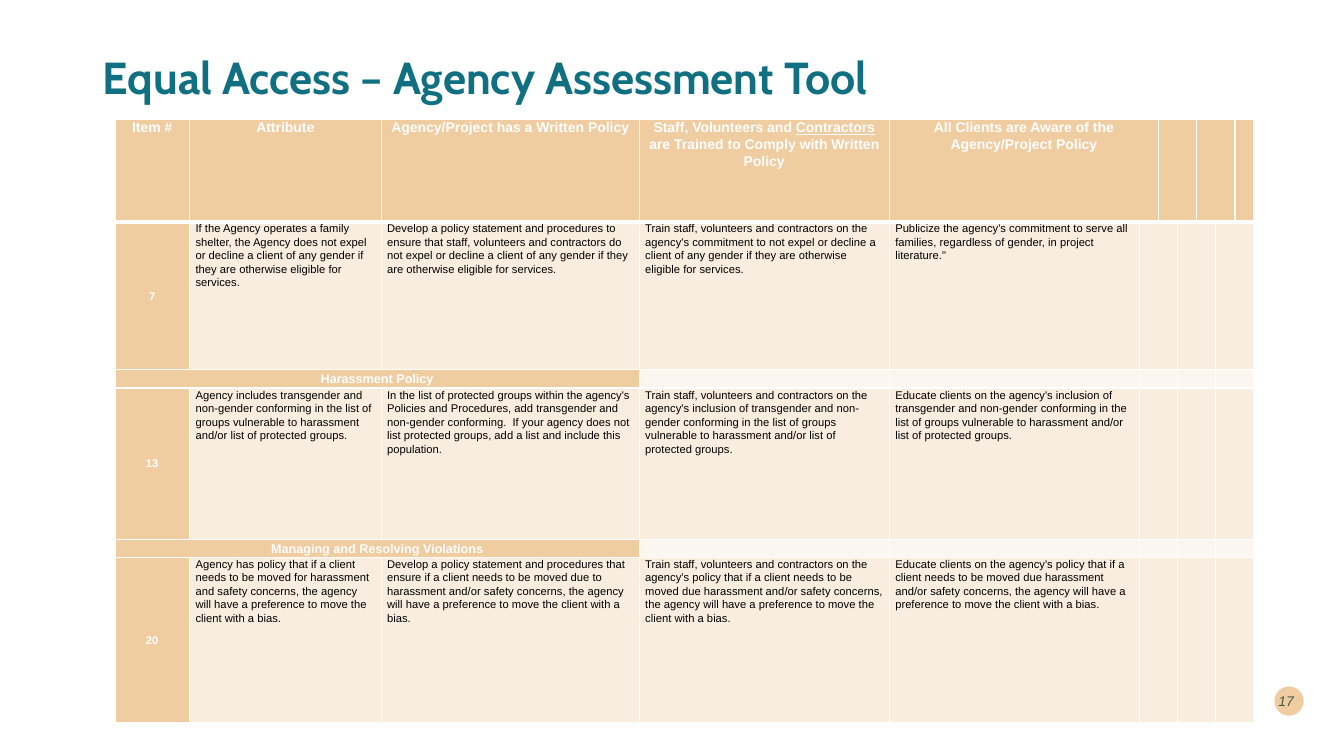
from lxml.etree import SubElement
from pptx import Presentation
from pptx.dml.color import RGBColor
from pptx.enum.shapes import MSO_SHAPE
from pptx.enum.text import MSO_ANCHOR, PP_ALIGN
from pptx.oxml import parse_xml
from pptx.oxml.ns import nsdecls, qn
from pptx.util import Inches, Pt

COLORS = {"title": "107082", "accent": "F0CDA1", "body": "F9EDE0", "band": "FCF6F0",
          "white": "FFFFFF", "black": "000000", "number": "00292E"}
COLUMNS = [0.74, 1.9, 2.56, 2.48, 2.48] + [0.19] * 6
ROWS = [1.02, 1.47, 0.18, 1.5, 0.18, 1.64]
HEADER = {"size": 10, "bold": True, "color": "white"}
ITEM = {"size": 8, "bold": True, "color": "white"}
SECTION = {"size": 9, "bold": True, "color": "white"}
BODY = {"size": 8, "bold": False, "color": "black"}

HEADINGS = [
    ["Item #"],
    ["Attribute"],
    ["Agency/Project has a Written Policy"],
    ["Staff, Volunteers and ", "Contractors ", "are Trained to Comply with Written Policy"],
    ["All Clients are Aware of the Agency/Project Policy"],
]
CONTENT = [
    ["7",
     "If the Agency operates a family shelter, the Agency does not expel or decline a client of "
     "any gender if they are otherwise eligible for services.",
     "Develop a policy statement and procedures to ensure that staff, volunteers and contractors "
     "do not expel or decline a client of any gender if they are otherwise eligible for services.",
     "Train staff, volunteers and contractors on the agency's commitment to not expel or decline "
     "a client of any gender if they are otherwise eligible for services.",
     "Publicize the agency's commitment to serve all families, regardless of gender, in project "
     "literature.\""],
    ["Harassment Policy"],
    ["13",
     "Agency includes transgender and non-gender conforming in the list of groups vulnerable to "
     "harassment and/or list of protected groups.",
     "In the list of protected groups within the agency's Policies and Procedures, add transgender "
     "and non-gender conforming.  If your agency does not list protected groups, add a list and "
     "include this population.",
     "Train staff, volunteers and contractors on the agency's inclusion of transgender and "
     "non-gender conforming in the list of groups vulnerable to harassment and/or list of "
     "protected groups.",
     "Educate clients on the agency's inclusion of transgender and non-gender conforming in the "
     "list of groups vulnerable to harassment and/or list of protected groups."],
    ["Managing and Resolving Violations"],
    ["20",
     "Agency has policy that if a client needs to be moved for harassment and safety concerns, the "
     "agency will have a preference to move the client with a bias.",
     "Develop a policy statement and procedures that ensure if a client needs to be moved due to "
     "harassment and/or safety concerns, the agency will have a preference to move the client "
     "with a bias.",
     "Train staff, volunteers and contractors on the agency's policy that if a client needs to be "
     "moved due harassment and/or safety concerns, the agency will have a preference to move the "
     "client with a bias.",
     "Educate clients on the agency's policy that if a client needs to be moved due harassment "
     "and/or safety concerns, the agency will have a preference to move the client with a bias."],
]


def rgb(name):
    return RGBColor.from_string(COLORS[name])


def set_font(font, size, color, name="Arial", **values):
    values.update(name=name, size=Pt(size))
    for key, value in values.items():
        setattr(font, key, value)
    font.color.rgb = rgb(color)


def place(shape, box):
    for key, value in zip(("left", "top", "width", "height"), box):
        setattr(shape, key, Inches(value))


def add_title(slide, box):
    title = slide.shapes.title
    place(title, box)
    title.text_frame.text = "Equal Access – Agency Assessment Tool"
    title.text_frame.vertical_anchor = MSO_ANCHOR.MIDDLE
    paragraph = title.text_frame.paragraphs[0]
    paragraph.alignment = PP_ALIGN.LEFT
    paragraph.line_spacing = 0.9
    set_font(paragraph.runs[0].font, 32, "title", "Cabin", bold=True)


def add_page_number(slide, box):
    left, top, width, height = box
    disc_size = 0.29
    disc = slide.shapes.add_shape(MSO_SHAPE.OVAL, *map(Inches, (
        left + width - disc_size, top + 0.06, disc_size, disc_size)))
    disc.shadow.inherit = False
    disc.fill.solid()
    disc.fill.fore_color.rgb = rgb("accent")
    disc.line.fill.background()
    number = slide.shapes.add_textbox(*map(Inches, box))
    frame = number.text_frame
    frame.word_wrap = True
    frame.vertical_anchor = MSO_ANCHOR.MIDDLE
    paragraph = frame.paragraphs[0]
    paragraph.alignment = PP_ALIGN.RIGHT
    run = paragraph.add_run()
    run.text = "17"
    set_font(run.font, 10, "number", italic=True)
    color = run.font.fill._xPr.find(f".//{qn('a:srgbClr')}")
    SubElement(color, qn("a:alpha"), val="70000")


def format_cell(cell, fill, bottom_width):
    margins = {"margin_left": 0.06, "margin_right": 0.06, "margin_top": 0, "margin_bottom": 0}
    for key, value in margins.items():
        setattr(cell, key, Inches(value))
    cell.fill.solid()
    cell.fill.fore_color.rgb = rgb(fill)
    properties = cell._tc.get_or_add_tcPr()
    for index, side in enumerate("LRTB"):
        width = Pt(bottom_width if side == "B" else 1)
        properties.insert(index, parse_xml(
            f'<a:ln{side} {nsdecls("a")} w="{width}"><a:solidFill>'
            f'<a:srgbClr val="{COLORS["white"]}"/></a:solidFill></a:ln{side}>'))
    SubElement(cell.text_frame.paragraphs[0]._p, qn("a:endParaRPr"), sz="800")


def write_cell(cell, parts, style, centered=True, middle=False):
    """Write the parts as runs, underlining every second one."""
    cell.vertical_anchor = MSO_ANCHOR.MIDDLE if middle else MSO_ANCHOR.TOP
    paragraph = cell.text_frame.paragraphs[0]
    paragraph.alignment = PP_ALIGN.CENTER if centered else PP_ALIGN.LEFT
    paragraph.line_spacing = 1.07
    for index, part in enumerate(parts):
        run = paragraph.add_run()
        run.text = part
        set_font(run.font, underline=index % 2 == 1, **style)


def fill_row(table, row, texts):
    is_section = len(texts) == 1
    for column in range(len(COLUMNS)):
        if row == 0 or column == 0 or (is_section and column < 3):
            fill = "accent"
        else:
            fill = "band" if is_section else "body"
        format_cell(table.cell(row, column), fill, 3 if row == 0 else 1)
    for column, text in enumerate(texts):
        cell = table.cell(row, column)
        if row == 0:
            write_cell(cell, text, HEADER)
        elif column == 0:
            write_cell(cell, [text], SECTION if is_section else ITEM, middle=True)
        else:
            write_cell(cell, [text], BODY, centered=False)
    if is_section:
        table.cell(row, 0).merge(table.cell(row, 2))
    first_pair = 4 if row == 0 else 5
    for column in range(first_pair, first_pair + 6, 2):
        table.cell(row, column).merge(table.cell(row, column + 1))


def add_assessment_table(slide, box):
    table = slide.shapes.add_table(len(ROWS), len(COLUMNS), *map(Inches, box)).table
    table.first_row = table.horz_banding = False
    for column, width in zip(table.columns, COLUMNS):
        column.width = Inches(width)
    for row, height in zip(table.rows, ROWS):
        row.height = Inches(height)
    for row, texts in enumerate([HEADINGS] + CONTENT):
        fill_row(table, row, texts)


def main():
    presentation = Presentation()
    presentation.slide_width, presentation.slide_height = Inches(13.33), Inches(7.5)
    slide = presentation.slides.add_slide(presentation.slide_layouts[5])
    add_title(slide, (0.92, 0.4, 11.5, 0.78))
    add_page_number(slide, (12.54, 6.75, 0.39, 0.4))
    add_assessment_table(slide, (1.14, 1.18, sum(COLUMNS), sum(ROWS)))
    presentation.save("out.pptx")


if __name__ == "__main__":
    main()
